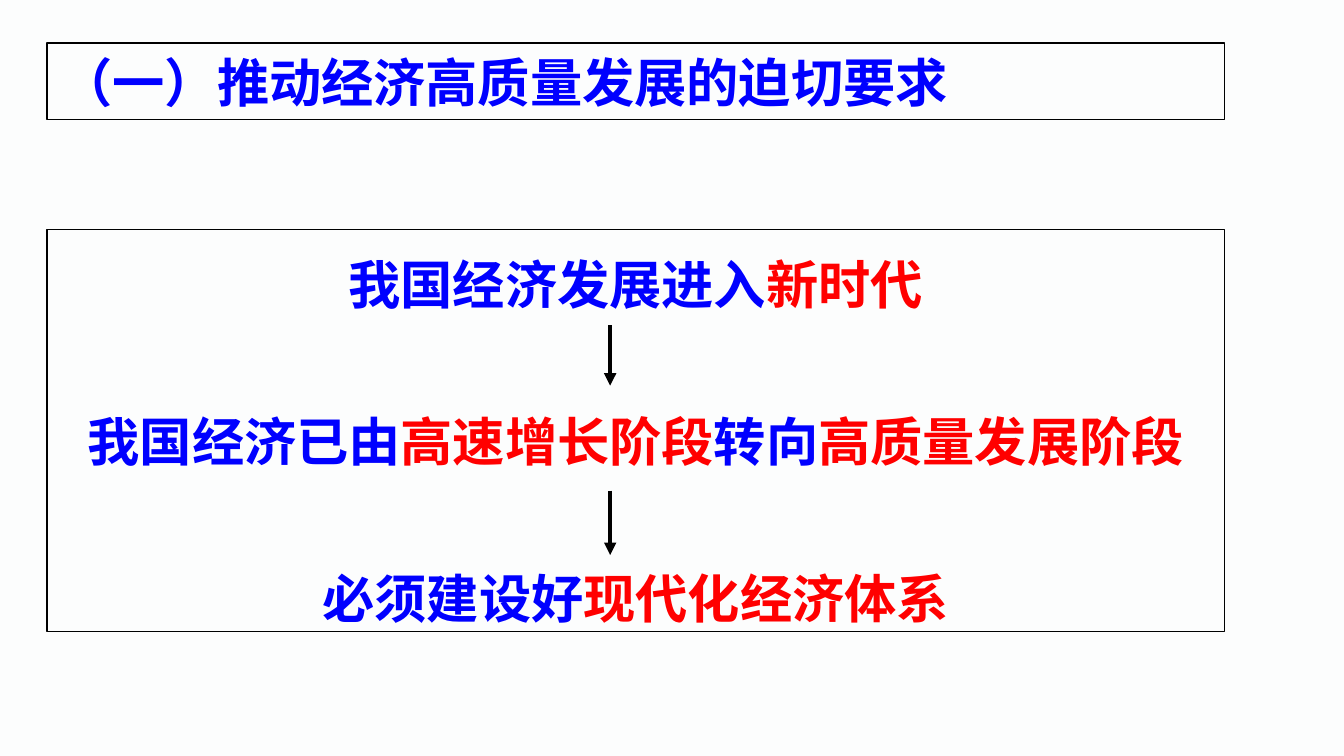
from typing import NamedTuple

from lxml import etree
from pptx import Presentation
from pptx.dml.color import RGBColor
from pptx.enum.shapes import MSO_CONNECTOR
from pptx.enum.text import MSO_ANCHOR, MSO_AUTO_SIZE, PP_ALIGN
from pptx.oxml.ns import qn
from pptx.util import Inches, Pt

STRAIGHT = MSO_CONNECTOR.STRAIGHT
TOP, MIDDLE = MSO_ANCHOR.TOP, MSO_ANCHOR.MIDDLE
NO_AUTOFIT = MSO_AUTO_SIZE.NONE
LEFT, CENTER = PP_ALIGN.LEFT, PP_ALIGN.CENTER

BACKGROUND = RGBColor(0xFC, 0xFD, 0xFD)
BLACK = RGBColor(0, 0, 0)
BLUE = RGBColor(0, 0, 0xFF)
RED = RGBColor(0xFF, 0, 0)

CJK_FONT = "Noto Sans CJK SC"
SLIDE_WIDTH = 10
LINE_PITCH = 42
FRAME_LEFT, FRAME_WIDTH = 0.35, 8.76
ARROW_X = 4.54


class Phrase(NamedTuple):
    text: str
    color: RGBColor = BLUE


class Arrow(NamedTuple):
    top: float
    bottom: float


HEADING = [Phrase("（一）推动经济高质量发展的迫切要求")]
STAGES = [
    [Phrase("我国经济发展进入"), Phrase("新时代", RED)],
    [
        Phrase("我国经济已由"),
        Phrase("高速增长阶段", RED),
        Phrase("转向"),
        Phrase("高质量发展阶段", RED),
    ],
    [Phrase("必须建设好"), Phrase("现代化经济体系", RED)],
]
ARROWS = [Arrow(2.42, 2.87), Arrow(3.65, 4.13)]


def write_phrases(paragraph, phrases: list[Phrase], *, font: str,
                  size: float = 28, bold: bool = True, align=LEFT) -> None:
    paragraph.alignment = align
    for phrase in phrases:
        run = paragraph.add_run()
        run.text = phrase.text
        run.font.name = font
        run.font.size = Pt(size)
        run.font.bold = bold
        run.font.color.rgb = phrase.color
        east_asian = etree.SubElement(run.font._element, qn("a:ea"))
        east_asian.set("typeface", CJK_FONT)


def frame_placeholder(placeholder, top: float, height: float, anchor):
    """Move and outline a placeholder, and return its text frame."""
    placeholder.left, placeholder.top = Inches(FRAME_LEFT), Inches(top)
    placeholder.width, placeholder.height = Inches(FRAME_WIDTH), Inches(height)
    placeholder.line.color.rgb = BLACK
    placeholder.line.width = Pt(0.75)
    frame = placeholder.text_frame
    frame.word_wrap = True
    frame.auto_size = NO_AUTOFIT
    frame.vertical_anchor = anchor
    return frame


def write_stages(frame, stages: list[list[Phrase]]) -> None:
    for index, phrases in enumerate(stages):
        paragraph = frame.add_paragraph() if index else frame.paragraphs[0]
        paragraph.line_spacing = Pt(LINE_PITCH)
        paragraph.space_before = Pt(LINE_PITCH if index else 0)
        properties = paragraph._p.get_or_add_pPr()
        properties.set("marL", "0")
        properties.set("indent", "0")
        etree.SubElement(properties, qn("a:buNone"))
        write_phrases(paragraph, phrases, font=CJK_FONT, align=CENTER)


def draw_arrow(slide, arrow: Arrow) -> None:
    connector = slide.shapes.add_connector(
        STRAIGHT, Inches(ARROW_X), Inches(arrow.top),
        Inches(ARROW_X), Inches(arrow.bottom))
    connector.line.color.rgb = BLACK
    connector.line.width = Pt(2.25)
    outline = connector.line._get_or_add_ln()
    etree.SubElement(outline, qn("a:tailEnd")).set("type", "triangle")
    etree.SubElement(connector._element.spPr, qn("a:effectLst"))


def main() -> None:
    presentation = Presentation()
    presentation.slide_width = Inches(SLIDE_WIDTH)
    presentation.slide_height = Inches(SLIDE_WIDTH * 9 / 16)
    slide = presentation.slides.add_slide(presentation.slide_layouts[1])
    slide.background.fill.solid()
    slide.background.fill.fore_color.rgb = BACKGROUND

    heading = frame_placeholder(slide.shapes.title, 0.32, 0.57, MIDDLE)
    write_phrases(heading.paragraphs[0], HEADING, font="Arial")

    body = frame_placeholder(slide.placeholders[1], 1.71, 2.99, TOP)
    write_stages(body, STAGES)
    for arrow in ARROWS:
        draw_arrow(slide, arrow)

    presentation.save("out.pptx")


if __name__ == "__main__":
    main()
